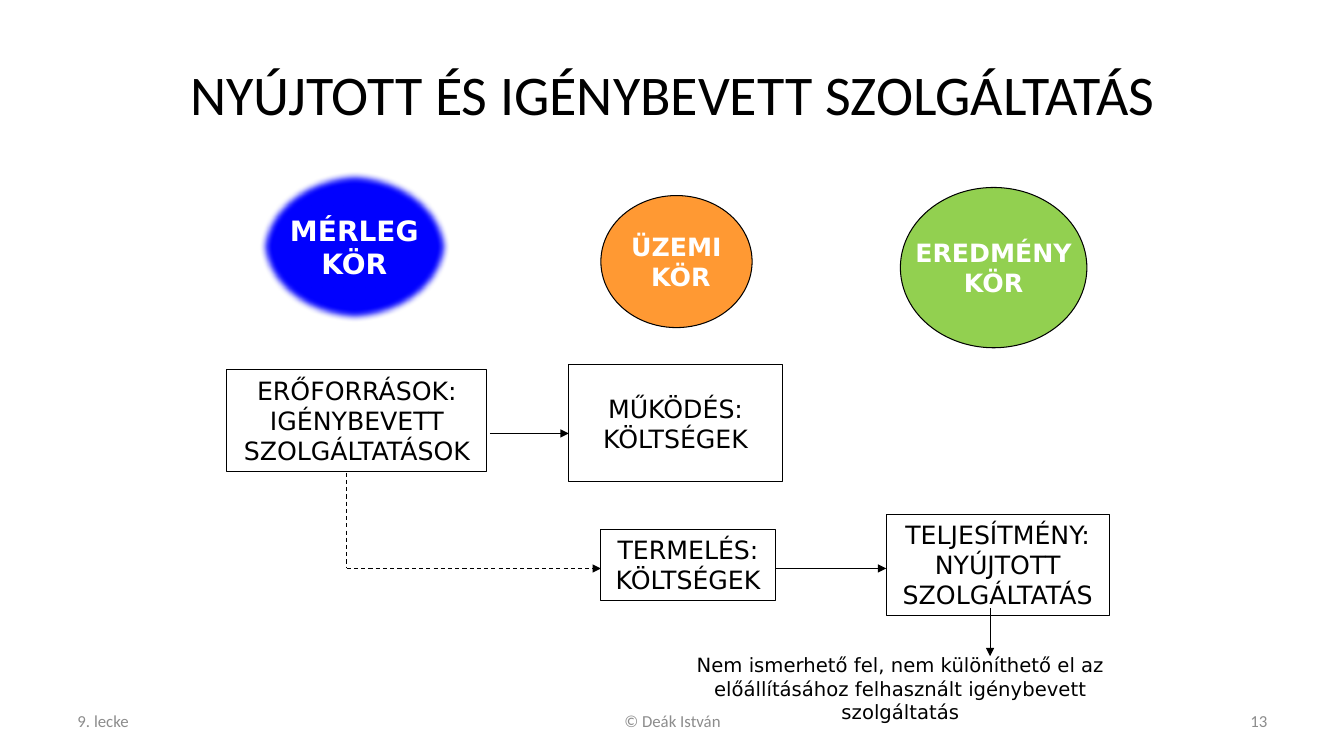
from lxml.etree import SubElement
from pptx import Presentation
from pptx.dml.color import RGBColor
from pptx.enum.dml import MSO_LINE
from pptx.enum.shapes import MSO_CONNECTOR, MSO_SHAPE
from pptx.enum.text import MSO_ANCHOR, MSO_AUTO_SIZE, PP_ALIGN
from pptx.oxml.ns import qn
from pptx.util import Inches, Pt

DIAGRAM_FONT = "DejaVu Sans"
BLACK, WHITE, GREY = "000000", "FFFFFF", "8C8C8C"


def color(value):
    """Turn a hex string into a colour."""
    return RGBColor.from_string(value)


def inches(*lengths):
    """Convert several lengths to inches."""
    return [Inches(length) for length in lengths]


def write(shape, lines, size, font=DIAGRAM_FONT, ink=BLACK, bold=False,
          align=PP_ALIGN.CENTER, anchor=MSO_ANCHOR.MIDDLE, wrap=False, grow=False):
    """Fill a shape with one formatted paragraph per line."""
    frame = shape.text_frame
    frame.text = "\n".join(lines)
    frame.word_wrap = wrap
    frame.vertical_anchor = anchor
    frame.auto_size = MSO_AUTO_SIZE.SHAPE_TO_FIT_TEXT if grow else MSO_AUTO_SIZE.NONE
    for paragraph in frame.paragraphs:
        paragraph.alignment = align
        paragraph.font.name = font
        paragraph.font.size = Pt(size)
        paragraph.font.bold = bold
        paragraph.font.color.rgb = color(ink)


def add_outlined(slide, kind, box, fill=None):
    """Add a preset shape with a thin black outline."""
    shape = slide.shapes.add_shape(kind, *inches(*box))
    shape.shadow.inherit = False
    if fill:
        shape.fill.solid()
        shape.fill.fore_color.rgb = color(fill)
    else:
        shape.fill.background()
    shape.line.color.rgb = color(BLACK)
    shape.line.width = Pt(0.75)
    return shape


def add_circle(slide, box, lines, fill, size=18, soft_edge=0):
    """Add a coloured circle with a bold white caption."""
    circle = add_outlined(slide, MSO_SHAPE.OVAL, box, fill)
    write(circle, lines, size, ink=WHITE, bold=True)
    if soft_edge:
        effects = circle._element.spPr.find(qn("a:effectLst"))
        SubElement(effects, qn("a:softEdge"), rad=str(Pt(soft_edge)))


def add_step(slide, box, lines, grow=True):
    """Add a framed step of the flow."""
    step = add_outlined(slide, MSO_SHAPE.RECTANGLE, box)
    anchor = MSO_ANCHOR.TOP if grow else MSO_ANCHOR.MIDDLE
    write(step, lines, 18, anchor=anchor, grow=grow)


def add_line(slide, start, end, dashed=False, arrow=True):
    """Add a straight line, with an arrowhead at its end if wanted."""
    line = slide.shapes.add_connector(MSO_CONNECTOR.STRAIGHT, *inches(*start, *end))
    line.line.color.rgb = color(BLACK)
    line.line.width = Pt(0.75)
    if dashed:
        line.line.dash_style = MSO_LINE.DASH
    if arrow:
        SubElement(line.line._get_or_add_ln(), qn("a:tailEnd"), type="triangle")
    SubElement(line._element.spPr, qn("a:effectLst"))


def add_title(slide, box):
    """Place the slide title."""
    title = slide.shapes.title
    title.left, title.top, title.width, title.height = inches(*box)
    write(title, ["NYÚJTOTT ÉS IGÉNYBEVETT SZOLGÁLTATÁS"], 40, "Calibri", wrap=True)


def add_circles(slide):
    """Add the three accounting circles."""
    add_circle(slide, (2.57, 1.7, 1.89, 1.5), ["MÉRLEG", "KÖR"], "0000FF", 20, soft_edge=5)
    add_circle(slide, (5.96, 1.94, 1.5, 1.31), ["ÜZEMI", " KÖR"], "FF9933")
    add_circle(slide, (8.93, 1.86, 1.85, 1.59), ["EREDMÉNY", "KÖR"], "92D050")


def add_flow(slide):
    """Add the steps, their connections and the closing remark."""
    add_step(slide, (2.25, 3.67, 2.58, 1.01),
             ["ERŐFORRÁSOK:", "IGÉNYBEVETT", "SZOLGÁLTATÁSOK"])
    add_step(slide, (5.64, 3.62, 2.12, 1.16), ["MŰKÖDÉS:", "KÖLTSÉGEK"], grow=False)
    add_step(slide, (5.96, 5.25, 1.73, 0.71), ["TERMELÉS:", "KÖLTSÉGEK"])
    add_step(slide, (8.79, 5.1, 2.21, 1.01),
             ["TELJESÍTMÉNY:", "NYÚJTOTT", "SZOLGÁLTATÁS"])

    corner = (3.44, 5.64)
    add_line(slide, (4.86, 4.3), (5.64, 4.3))
    add_line(slide, (3.44, 4.69), corner, dashed=True, arrow=False)
    add_line(slide, corner, (5.96, 5.64), dashed=True)
    add_line(slide, (7.69, 5.64), (8.79, 5.64))

    remark = slide.shapes.add_textbox(*inches(6.37, 6.43, 5.12, 0.57))
    write(remark, ["Nem ismerhető fel, nem különíthető el az",
                   "előállításához felhasznált igénybevett szolgáltatás"],
          14, anchor=MSO_ANCHOR.TOP, grow=True)
    add_line(slide, (9.82, 6.03), (9.82, 6.51))


def add_footer(slide, top, height):
    """Add the lesson, author and page number along the bottom."""
    for left, width, text, align in (
        (0.67, 3.11, "9. lecke", PP_ALIGN.LEFT),
        (4.56, 4.22, "© Deák István", PP_ALIGN.CENTER),
        (9.56, 3.11, "13", PP_ALIGN.RIGHT),
    ):
        box = slide.shapes.add_textbox(*inches(left, top, width, height))
        write(box, [text], 12, "Calibri", GREY, align=align, wrap=True)


def main():
    """Build and save the presentation."""
    presentation = Presentation()
    presentation.slide_width, presentation.slide_height = inches(13.33, 7.5)
    slide = presentation.slides.add_slide(presentation.slide_layouts.get_by_name("Title Only"))
    add_title(slide, (0.67, 0.3, 12, 1.25))
    add_footer(slide, 6.95, 0.4)
    add_circles(slide)
    add_flow(slide)
    presentation.save("out.pptx")


if __name__ == "__main__":
    main()
